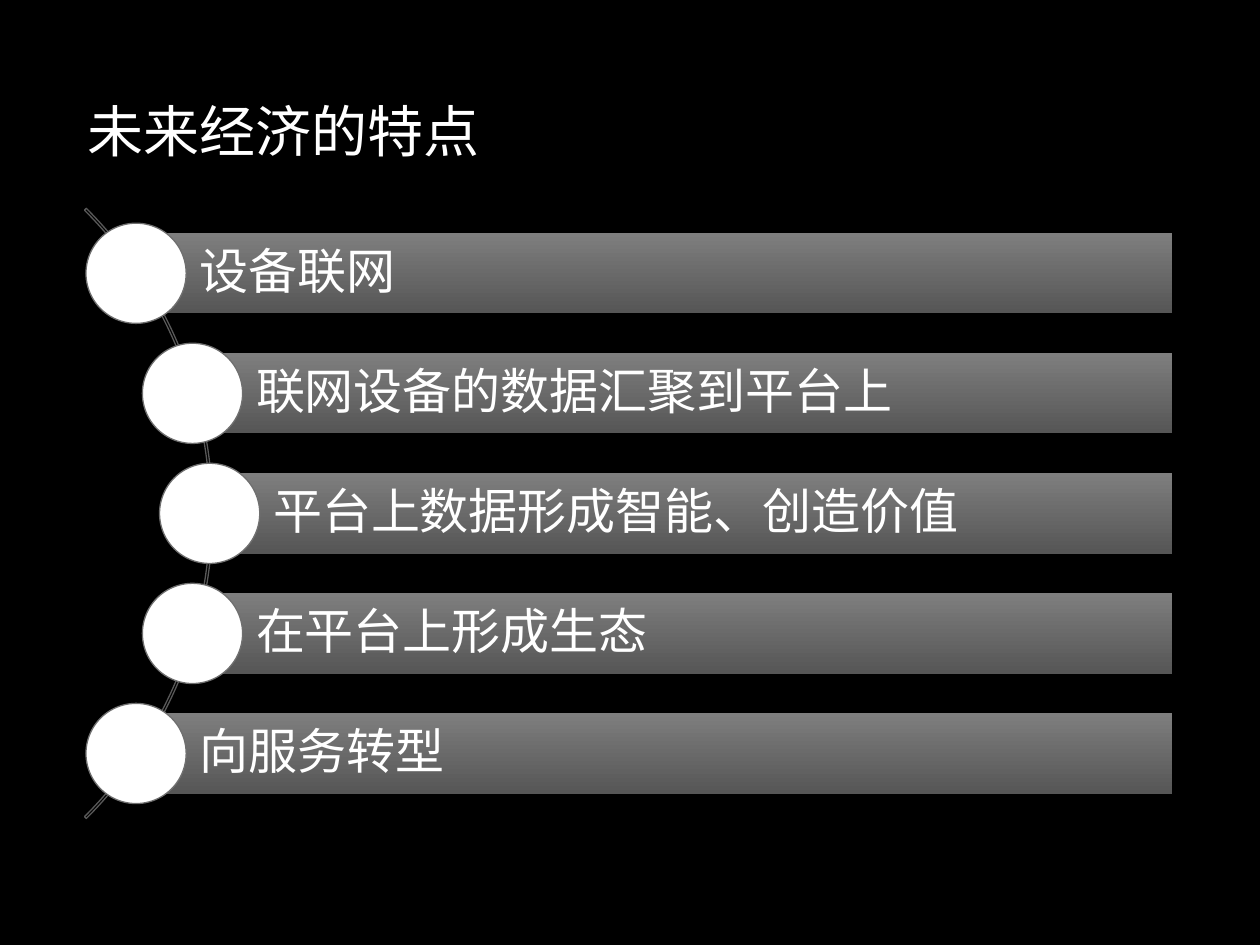
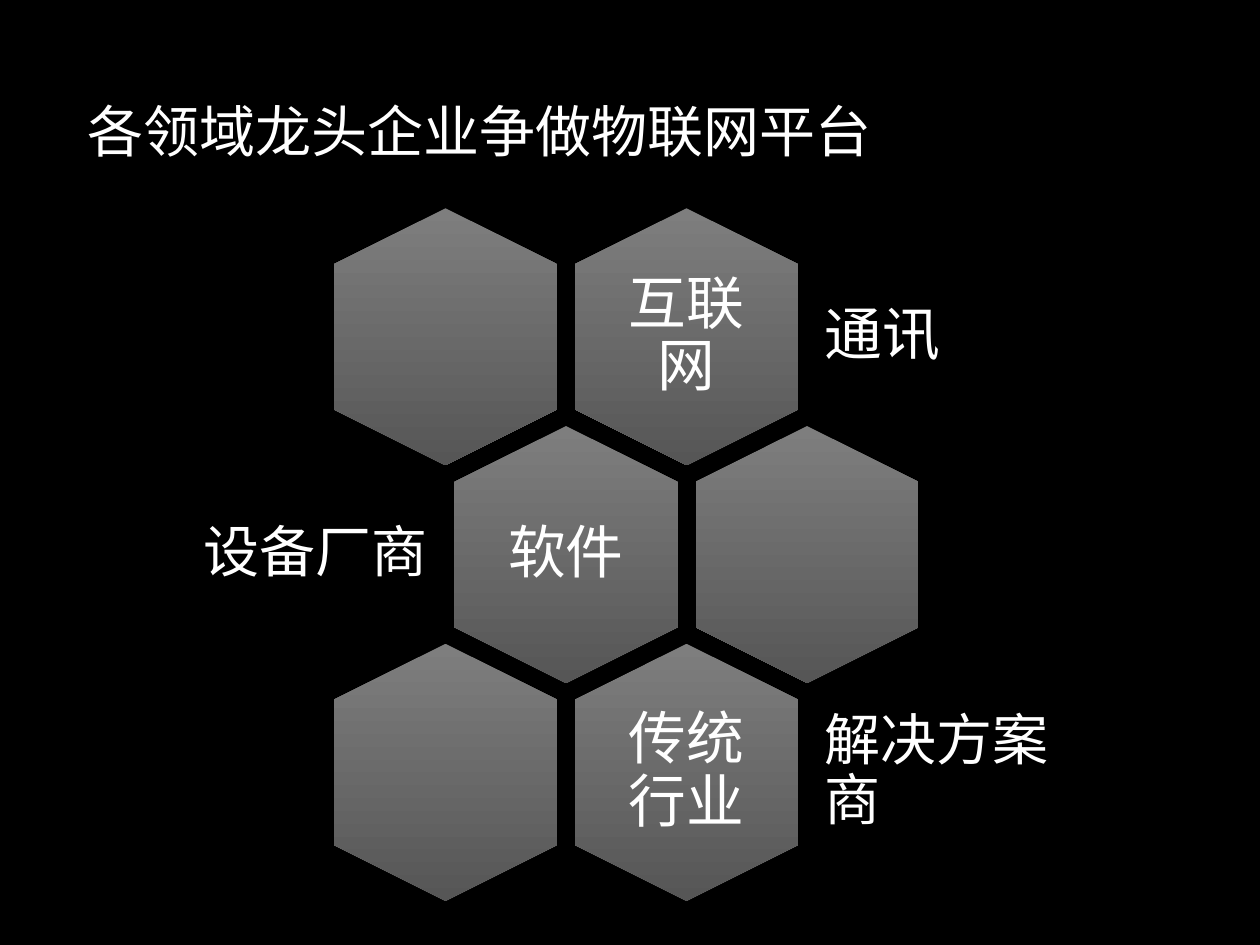
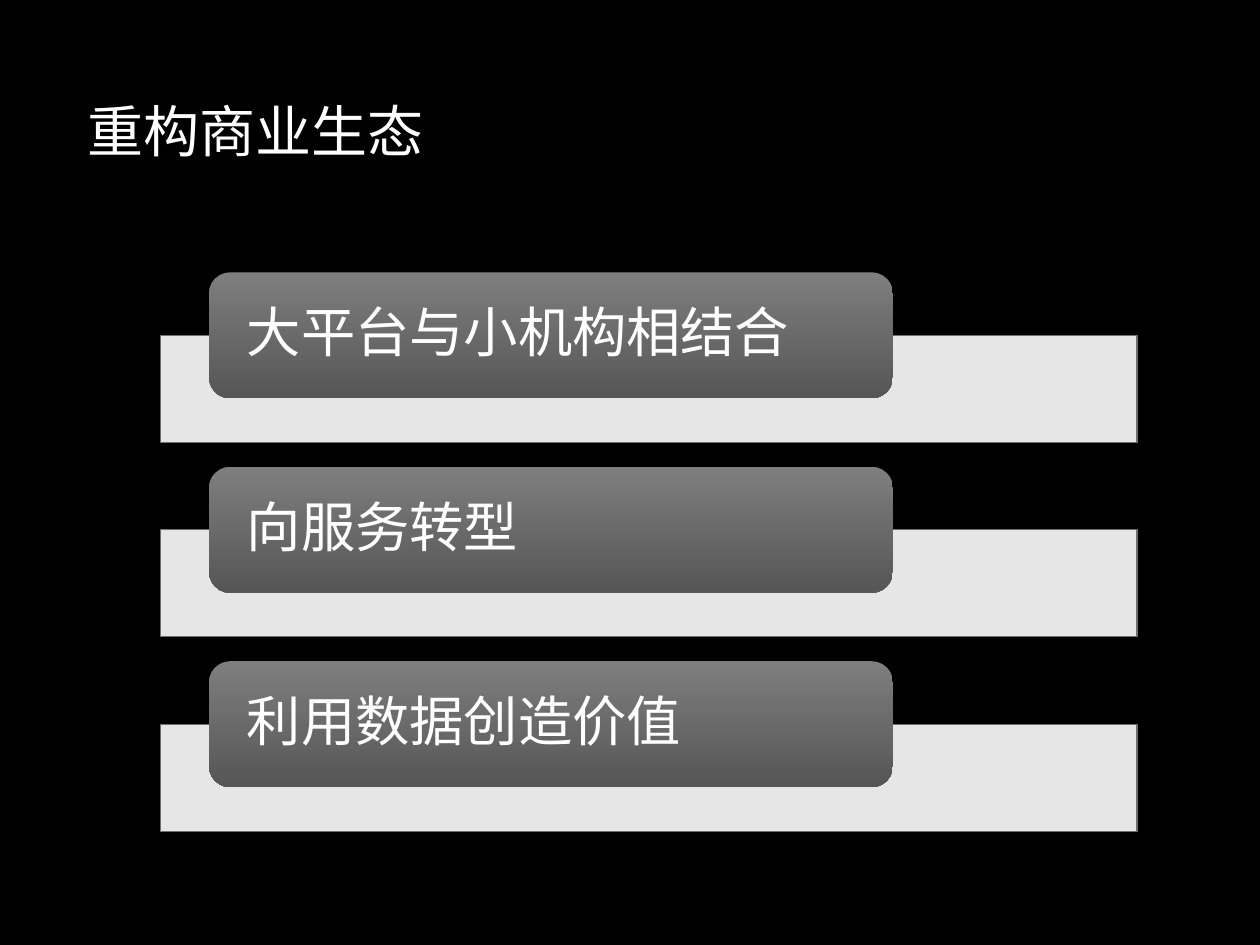
"""Build three slides on the platform economy."""
import math
from collections import namedtuple

from lxml import etree
from pptx import Presentation
from pptx import util as u
from pptx.dml.color import RGBColor
from pptx.enum import shapes, text
from pptx.oxml import ns

WHITE = RGBColor(0xFF, 0xFF, 0xFF)
SILVER = RGBColor(0xBF, 0xBF, 0xBF)
BLACK = RGBColor(0x00, 0x00, 0x00)
GREY_TOP = RGBColor(0x7E, 0x7E, 0x7E)
GREY_BOTTOM = RGBColor(0x56, 0x56, 0x56)
OUTLINE = RGBColor(0x6F, 0x6F, 0x6F)
ARC_LINE = RGBColor(0x59, 0x59, 0x59)
SANS = "Noto Sans CJK SC"
DISPLAY = "League Spartan"
TITLE_ONLY = 5
DOWNWARD = 270

Box = namedtuple("Box", "left top width height")


def centred(x, y, width, height):
    """Return the box of a given size around a centre."""
    return Box(x - width / 2, y - height / 2, width, height)


def lengths(box):
    """Return a box as four slide lengths."""
    return [u.Cm(value) for value in box]


def fill_gradient(fill, start, end, angle=DOWNWARD):
    """Apply a two-colour linear gradient."""
    fill.gradient()
    fill.gradient_angle = angle
    for stop, colour in zip(fill.gradient_stops, (start, end)):
        stop.color.rgb = colour


def fill_solid(fill, colour, opacity=100):
    """Apply a solid colour, see-through when opacity is below 100."""
    fill.solid()
    fill.fore_color.rgb = colour
    if opacity < 100:
        colour_element = fill._xPr.find(".//" + ns.qn("a:srgbClr"))
        etree.SubElement(colour_element, ns.qn("a:alpha"), val=str(opacity * 1000))


def add_run(paragraph, words, size, font_name):
    """Add a run with one typeface for Latin and East Asian text."""
    run = paragraph.add_run()
    run.text = words
    run.font.size = u.Pt(size)
    run.font.name = font_name
    latin = run._r.get_or_add_rPr().find(ns.qn("a:latin"))
    east_asian = etree.Element(ns.qn("a:ea"), typeface=font_name)
    latin.addnext(east_asian)
    return run


def write(shape, words, size, insets, font_name=SANS, align=text.PP_ALIGN.LEFT):
    """Write one white paragraph, vertically centred in a shape."""
    frame = shape.text_frame
    frame.word_wrap = True
    frame.vertical_anchor = text.MSO_ANCHOR.MIDDLE
    (frame.margin_left, frame.margin_top,
     frame.margin_right, frame.margin_bottom) = [u.Cm(inset) for inset in insets]
    paragraph = frame.paragraphs[0]
    paragraph.alignment = align
    paragraph.line_spacing = 0.9
    paragraph.space_after = u.Pt(size * 0.35)
    add_run(paragraph, words, size, font_name).font.color.rgb = WHITE


def add_plain_shape(slide, kind, box, line_colour=None):
    """Add an unshadowed shape, outlined only if a colour is given."""
    shape = slide.shapes.add_shape(kind, *lengths(box))
    shape.shadow.inherit = False
    if line_colour is None:
        shape.line.fill.background()
    else:
        shape.line.color.rgb = line_colour
        shape.line.width = u.Pt(0.75)
    return shape


def add_grey_shape(slide, kind, box, angle=DOWNWARD):
    """Add a shape with the shared grey gradient."""
    shape = add_plain_shape(slide, kind, box)
    fill_gradient(shape.fill, GREY_TOP, GREY_BOTTOM, angle)
    return shape


def add_titled_slide(presentation, words):
    """Add a title-only slide and format its title."""
    slide = presentation.slides.add_slide(presentation.slide_layouts[TITLE_ONLY])
    title = slide.shapes.title
    title.left, title.top, title.width, title.height = lengths(Box(1.5, 1.5, 24.56, 2.26))
    title.text_frame.vertical_anchor = text.MSO_ANCHOR.MIDDLE
    paragraph = title.text_frame.paragraphs[0]
    paragraph.alignment = text.PP_ALIGN.LEFT
    run = add_run(paragraph, words, 32, SANS)
    fill_gradient(run.font.fill, WHITE, SILVER)
    return slide


def draw_curved_list(slide, box, items):
    """Draw bars whose round markers follow a quarter arc."""
    pitch, bar_height, marker_size = 2.42, 1.62, 2.02
    radius = box.height / math.sqrt(2)
    centre_x = box.left - box.height / 2
    centre_y = box.top + box.height / 2
    right = box.left + box.width

    arc = add_plain_shape(slide, shapes.MSO_SHAPE.BLOCK_ARC,
                          centred(centre_x, centre_y, 2 * radius, 2 * radius), ARC_LINE)
    arc.fill.background()
    for index, value in enumerate((189, 27, 0.003)):
        arc.adjustments[index] = value

    for index, words in enumerate(items):
        rise = (index - (len(items) - 1) / 2) * pitch
        x = centre_x + math.sqrt((radius - 0.06) ** 2 - rise ** 2)
        y = centre_y + rise
        bar = add_grey_shape(slide, shapes.MSO_SHAPE.RECTANGLE,
                             Box(x, y - bar_height / 2, right - x, bar_height))
        write(bar, words, 28, (1.28, 0.2, 0.2, 0.2))
        marker = add_plain_shape(slide, shapes.MSO_SHAPE.OVAL,
                                 centred(x, y, marker_size, marker_size), OUTLINE)
        fill_solid(marker.fill, WHITE)


def draw_honeycomb(slide, box, rows):
    """Draw staggered hexagon pairs with a label beside each pair."""
    column_pitch, row_pitch = 4.86, 4.39
    hexagon_length, hexagon_breadth = 5.18, 4.5
    label_height = 3.1
    insets = (0.35,) * 4
    half_pitch = column_pitch / 2
    for index, (cell_words, label) in enumerate(rows):
        shifted = index % 2 == 1
        y = box.top + hexagon_length / 2 + index * row_pitch
        first_x = box.left + 5.6 + shifted * half_pitch
        last_x = first_x + column_pitch
        for x in (first_x, last_x):
            hexagon = add_grey_shape(slide, shapes.MSO_SHAPE.HEXAGON,
                                     centred(x, y, hexagon_length, hexagon_breadth), 0)
            hexagon.rotation = 90

        cell_x = first_x if shifted else last_x
        cell = slide.shapes.add_textbox(*lengths(centred(cell_x, y, 3.1, 3.56)))
        write(cell, cell_words, 33, insets, align=text.PP_ALIGN.CENTER)

        if shifted:
            start, end = box.left, first_x - half_pitch
            align = text.PP_ALIGN.RIGHT
        else:
            start, end = last_x + half_pitch, box.left + box.width
            align = text.PP_ALIGN.LEFT
        label_box = Box(start, y - label_height / 2, end - start, label_height)
        size = 33 if len(label) < 4 else 32
        write(slide.shapes.add_textbox(*lengths(label_box)), label, size, insets, align=align)


def draw_tabbed_bands(slide, box, items):
    """Draw pale bands, each overlapped by a rounded tab."""
    pitch, tab_height, band_height = 3.92, 2.54, 2.16
    for index, words in enumerate(items):
        top = box.top + index * pitch
        band = add_plain_shape(slide, shapes.MSO_SHAPE.RECTANGLE,
                               Box(box.left, top + tab_height / 2, box.width, band_height),
                               OUTLINE)
        fill_solid(band.fill, WHITE, opacity=90)
        tab = add_grey_shape(slide, shapes.MSO_SHAPE.ROUNDED_RECTANGLE,
                             Box(box.left + box.width * 0.05, top,
                                 box.width * 0.7, tab_height))
        write(tab, words, 31, (0.64, 0.12, 0.64, 0.12), DISPLAY)


def main():
    """Build and save the presentation."""
    presentation = Presentation()
    presentation.slide_width, presentation.slide_height = u.Cm(25.4), u.Cm(19.05)
    fill_solid(presentation.slide_master.background.fill, BLACK)

    slide = add_titled_slide(presentation, "未来经济的特点")
    draw_curved_list(slide, Box(1.74, 4.2, 21.89, 12.3), [
        "设备联网",
        "联网设备的数据汇聚到平台上",
        "平台上数据形成智能、创造价值",
        "在平台上形成生态",
        "向服务转型",
    ])

    slide = add_titled_slide(presentation, "各领域龙头企业争做物联网平台")
    draw_honeycomb(slide, Box(3.38, 4.2, 18.67, 13.97), [
        ("互联网", "通讯"),
        ("软件", "设备厂商"),
        ("传统行业", "解决方案商"),
    ])

    slide = add_titled_slide(presentation, "重构商业生态")
    draw_tabbed_bands(slide, Box(3.23, 5.49, 19.69, 11.27), [
        "大平台与小机构相结合",
        "向服务转型",
        "利用数据创造价值",
    ])

    presentation.save("out.pptx")


if __name__ == "__main__":
    main()
